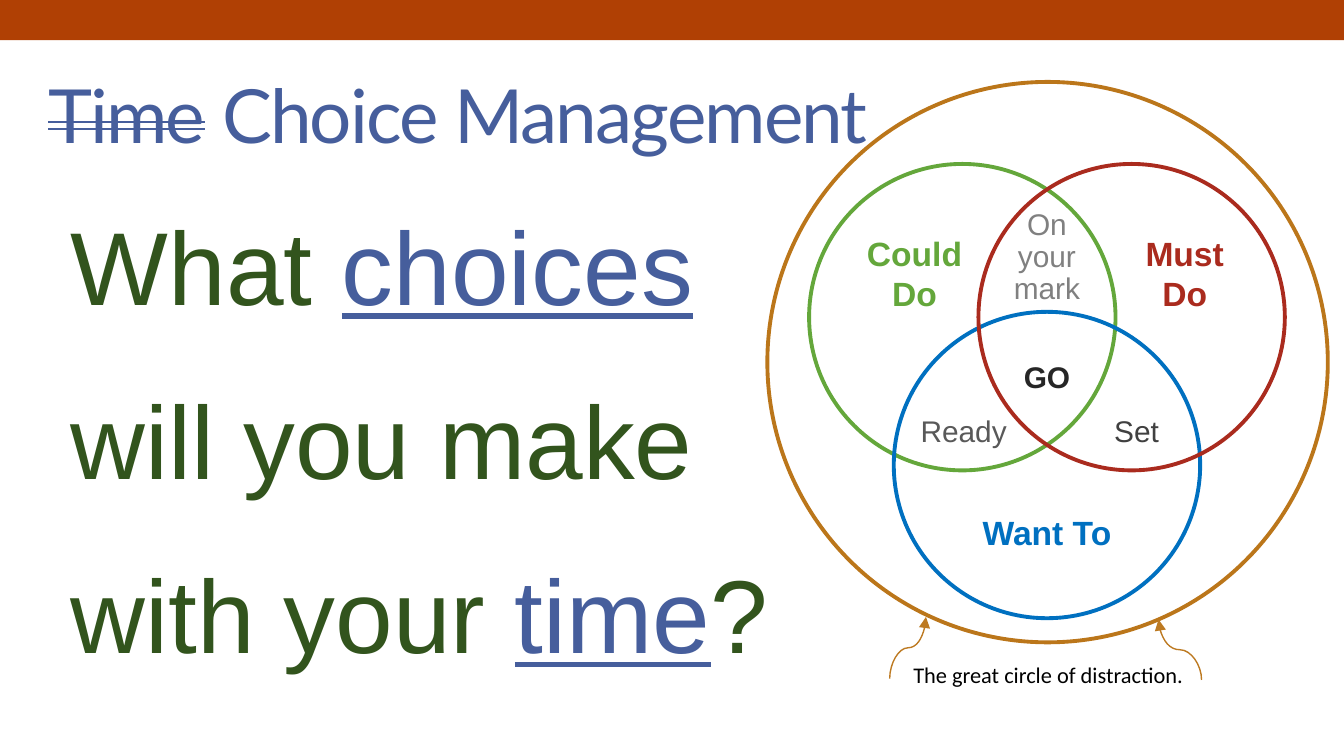
"""Build the Choice Management slide with its Venn diagram of could, must and want."""
from lxml import etree
from pptx import Presentation
from pptx.dml.color import RGBColor
from pptx.enum import shapes, text
from pptx.oxml.ns import qn
from pptx.util import Inches, Pt

COLORS = {
    "bar": "B04004", "blue": "465E9C", "forest": "32541D", "ring": "BB761A",
    "could": "64A73B", "want": "0070C0", "must": "AA2B1E", "mark": "808080",
    "go": "262626", "ready": "595959", "set": "404040", "black": "000000",
    "arrow": "BD7A22",
}
TITLE = [("Time", "blue"), (" Choice Management", "blue")]
QUESTION = [
    ("What ", "forest"), ("choices", "blue"), ("\vwill you make\vwith your ", "forest"),
    ("time", "blue"), ("?", "forest"),
]
CIRCLES = [
    (5.71, 0.61, 4.17, "ring", "", (0, 0, 0, 0)),
    (6.02, 1.22, 2.28, "could", "Could Do", (0.08, 0, 0.79, 0.66)),
    (6.65, 2.32, 2.28, "want", "Want To", (0, 1, 0, 0)),
    (7.28, 1.22, 2.28, "must", "Must\vDo", (0.79, 0, 0, 0.66)),
]
CENTER, LEFT = text.PP_ALIGN.CENTER, text.PP_ALIGN.LEFT
STEPS = [
    ([("On\vyour\vmark", "mark")], CENTER, 0.9, 0),
    ([("GO", "go")], CENTER, 1, 28),
    ([("Ready", "ready"), ("\tSet", "set")], LEFT, 1, 10),
]
SET_TAB = 1.44
CAPTION = "The great circle of distraction."
ARROWS = [((8.94, 5.06), (8.62, 4.61)), ((6.62, 5.05), (6.89, 4.59))]


def color(name):
    return RGBColor.from_string(COLORS[name])


def fill_paragraph(paragraph, runs, font, size, align=None, spacing=None):
    paragraph.alignment = align
    paragraph.line_spacing = spacing
    for words, name in runs:
        for index, line in enumerate(words.split("\v")):
            if index:
                paragraph.add_line_break()
            if line:
                run = paragraph.add_run()
                run.text = line
                run.font.color.rgb = color(name)
    paragraph.font.name, paragraph.font.size = font, Pt(size)


def set_insets(frame, insets):
    (frame.margin_left, frame.margin_top,
     frame.margin_right, frame.margin_bottom) = map(Inches, insets)


def add_text_frame(slide, *box):
    frame = slide.shapes.add_textbox(*map(Inches, box)).text_frame
    frame.word_wrap = True
    return frame


def add_circle(slide, left, top, diameter, name, words, insets):
    circle = slide.shapes.add_shape(
        shapes.MSO_SHAPE.OVAL, *map(Inches, (left, top, diameter, diameter)))
    circle.shadow.inherit = False
    circle.fill.background()
    circle.line.color.rgb = color(name)
    circle.line.width = Pt(2.08)
    if words:
        frame = circle.text_frame
        frame.word_wrap = True
        frame.vertical_anchor = text.MSO_ANCHOR.MIDDLE
        set_insets(frame, insets)
        fill_paragraph(frame.paragraphs[0], [(words, name)], "Arial", 18, CENTER)
        frame.paragraphs[0].font.bold = True


def add_steps(slide):
    frame = add_text_frame(slide, 6.65, 1.51, 2.28, 1.88)
    set_insets(frame, (0.2, 0.05, 0.2, 0.05))
    for index, (runs, align, spacing, before) in enumerate(STEPS):
        paragraph = frame.add_paragraph() if index else frame.paragraphs[0]
        fill_paragraph(paragraph, runs, "Arial", 16, align, spacing)
        paragraph.space_before = Pt(before)
        paragraph.font.bold = runs[0][0] == "GO"
    properties = paragraph._p.get_or_add_pPr()
    tabs = etree.Element(qn("a:tabLst"))
    etree.SubElement(tabs, qn("a:tab"), pos=str(Inches(SET_TAB)), algn="l")
    properties.find(qn("a:defRPr")).addprevious(tabs)


def add_curved_arrow(slide, start, end):
    center_x, center_y = (start[0] + end[0]) / 2, (start[1] + end[1]) / 2
    turned = [
        Inches(value)
        for x, y in (start, end)
        for value in (center_x - (y - center_y), center_y + (x - center_x))
    ]
    arrow = slide.shapes.add_connector(shapes.MSO_CONNECTOR.CURVE, *turned)
    arrow.line.color.rgb = color("arrow")
    arrow.line.width = Pt(0.75)
    properties = arrow._element.spPr
    properties.find(qn("a:xfrm")).set("rot", str(270 * 60000))
    etree.SubElement(properties.find(qn("a:ln")), qn("a:tailEnd"), type="triangle")
    etree.SubElement(properties, qn("a:effectLst"))


def main():
    presentation = Presentation()
    presentation.slide_width = Inches(10)
    presentation.slide_height = Inches(10) * 9 // 16
    slide = presentation.slides.add_slide(presentation.slide_layouts[6])

    bar = slide.shapes.add_shape(
        shapes.MSO_SHAPE.RECTANGLE, 0, 0, presentation.slide_width, Inches(0.3))
    bar.shadow.inherit = False
    bar.fill.solid()
    bar.fill.fore_color.rgb = color("bar")
    bar.line.fill.background()

    frame = add_text_frame(slide, 0.26, 0.44, 9, 0.81)
    frame.vertical_anchor = text.MSO_ANCHOR.MIDDLE
    title = frame.paragraphs[0]
    fill_paragraph(title, TITLE, "Lato", 40)
    for run in title.runs:
        run.font._element.set("spc", "-100")
    title.runs[0].font._element.set("strike", "dblStrike")

    question = add_text_frame(slide, 0.43, 1.08, 9, 4).paragraphs[0]
    fill_paragraph(question, QUESTION, "Arial", 55.5, spacing=1.4)
    for run in question.runs:
        run.font.underline = run.text in ("choices", "time")

    for circle in CIRCLES:
        add_circle(slide, *circle)
    add_steps(slide)

    caption = add_text_frame(slide, 5.83, 4.87, 3.94, 0.3).paragraphs[0]
    fill_paragraph(caption, [(CAPTION, "black")], "Calibri", 12, CENTER)
    for start, end in ARROWS:
        add_curved_arrow(slide, start, end)
    presentation.save("out.pptx")


if __name__ == "__main__":
    main()
